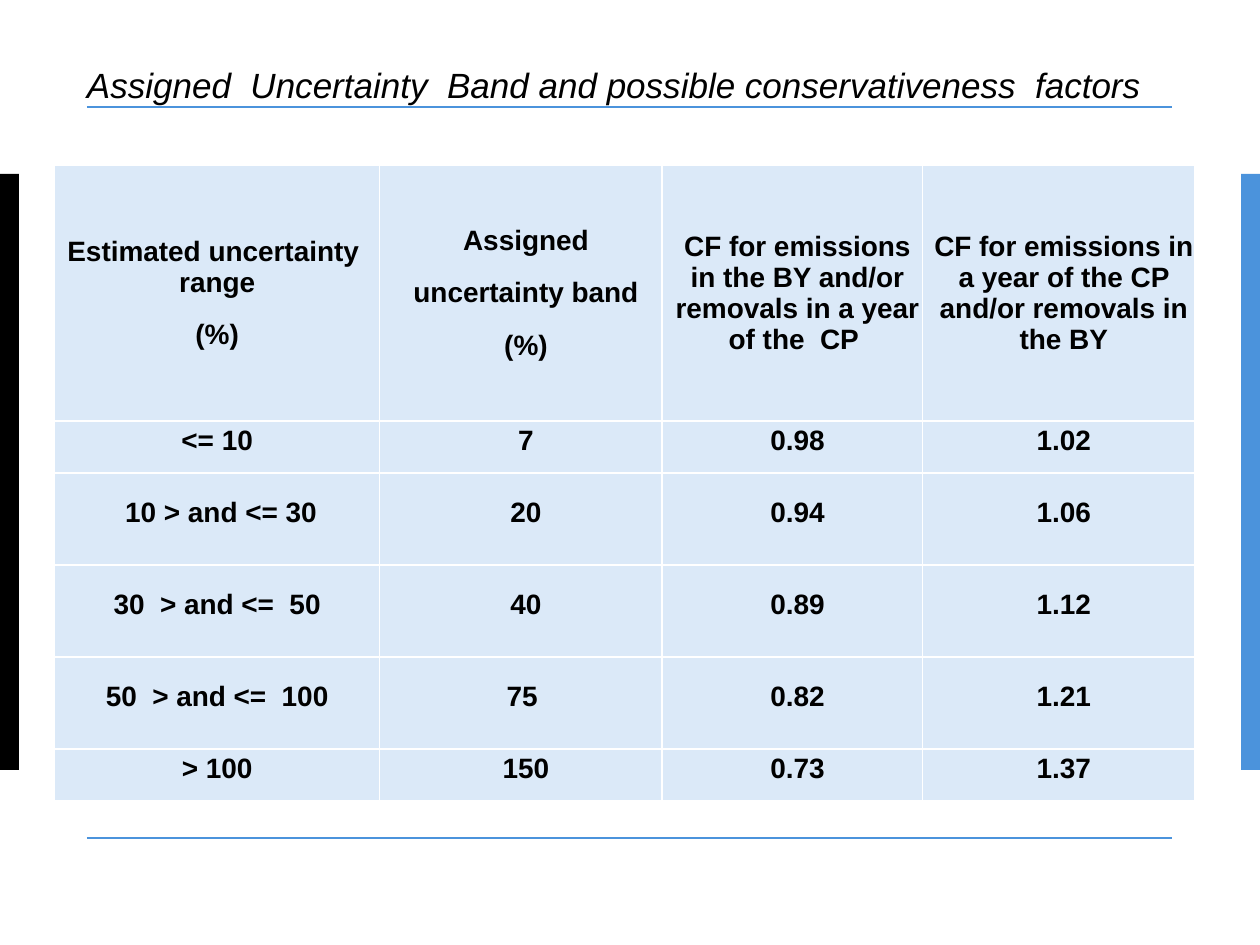
from lxml import etree
from pptx import Presentation
from pptx.dml.color import RGBColor
from pptx.enum.shapes import MSO_CONNECTOR, MSO_SHAPE
from pptx.enum.text import MSO_ANCHOR, PP_ALIGN
from pptx.oxml.ns import qn
from pptx.util import Pt

RECT = MSO_SHAPE.RECTANGLE
LINE = MSO_CONNECTOR.STRAIGHT
MIDDLE = MSO_ANCHOR.MIDDLE
CENTER = PP_ALIGN.CENTER

BLACK = RGBColor(0x00, 0x00, 0x00)
BLUE = RGBColor(0x4B, 0x93, 0xDC)
PALE = RGBColor(0xDB, 0xE9, 0xF8)
WHITE = RGBColor(0xFF, 0xFF, 0xFF)

TITLE = "Assigned  Uncertainty  Band and possible conservativeness  factors"
# Each header cell is a list of paragraphs; "\n" is a line break
HEADER = [
    ["Estimated uncertainty \nrange", "(%)"],
    ["Assigned", "uncertainty band", "(%)"],
    ["CF for emissions in the BY and/or removals in a year of the  CP "],
    ["CF for emissions in a year of the CP and/or removals in the BY"],
]
ROWS = [
    ["<= 10", "7", "0.98", "1.02"],
    [" 10 > and <= 30", "20", "0.94", "1.06"],
    ["30  > and <=  50", "40", "0.89", "1.12"],
    ["50  > and <=  100", "75 ", "0.82", "1.21"],
    ["> 100", "150", "0.73", "1.37"],
]
WIDTHS = [185.8, 161.3, 149, 155.5]
HEIGHTS = [146.2, 29.5, 52.6, 52.6, 52.6, 29.5]


def add_run(para, text, size, bold=False, italic=False):
    run = para.add_run()
    run.text = text
    font = run.font
    font.name, font.size = "Arial", Pt(size)
    font.bold, font.italic = bold, italic
    font.color.rgb = BLACK


def add_bar(slide, left, color):
    bar = slide.shapes.add_shape(RECT, Pt(left), Pt(99.4), Pt(10.8), Pt(340.6))
    bar.shadow.inherit = False
    bar.fill.solid()
    bar.fill.fore_color.rgb = color
    bar.line.fill.background()


def add_rule(slide, top):
    rule = slide.shapes.add_connector(LINE, Pt(49.7), Pt(top), Pt(669.6), Pt(top))
    rule.line.color.rgb = BLUE
    rule.line.width = Pt(1)
    etree.SubElement(rule._element.spPr, qn("a:effectLst"))


def add_title(slide):
    box = slide.shapes.add_textbox(Pt(49.7), Pt(24.5), Pt(620), Pt(36))
    frame = box.text_frame
    frame.word_wrap = True
    frame.vertical_anchor = MIDDLE
    frame.margin_left = frame.margin_right = Pt(0)
    frame.margin_top = frame.margin_bottom = Pt(0)
    para = frame.paragraphs[0]
    para.line_spacing = 1.5
    add_run(para, TITLE, 20, italic=True)


def add_edges(cell):
    props = cell._tc.get_or_add_tcPr()
    for side in ("lnL", "lnR", "lnT", "lnB"):
        edge = etree.SubElement(props, qn("a:" + side), w=str(Pt(1)))
        fill = etree.SubElement(edge, qn("a:solidFill"))
        etree.SubElement(fill, qn("a:srgbClr"), val=str(WHITE))


def fill_cell(cell, texts, gap, indent, pitch=None):
    cell.margin_left = cell.margin_right = Pt(0)
    cell.margin_top = cell.margin_bottom = Pt(0)
    cell.vertical_anchor = MIDDLE
    add_edges(cell)
    cell.fill.solid()
    cell.fill.fore_color.rgb = PALE
    frame = cell.text_frame
    for i, text in enumerate(texts):
        para = frame.add_paragraph() if i else frame.paragraphs[0]
        para.alignment = CENTER
        para.space_before = Pt(gap if i else 0)
        para.space_after = Pt(gap)
        if pitch:
            para.line_spacing = Pt(pitch)
        if indent:
            para._p.get_or_add_pPr().set("marL", str(Pt(indent)))
        for j, part in enumerate(text.split("\n")):
            if j:
                para.add_line_break()
            add_run(para, part, 16, bold=True)


def add_grid(slide):
    frame = slide.shapes.add_table(
        len(HEIGHTS), len(WIDTHS), Pt(31.2), Pt(94.5),
        Pt(sum(WIDTHS)), Pt(sum(HEIGHTS)))
    table = frame.table
    table.first_row = table.horz_banding = False
    for col, width in zip(table.columns, WIDTHS):
        col.width = Pt(width)
    for row, height in zip(table.rows, HEIGHTS):
        row.height = Pt(height)
    for c in range(len(WIDTHS)):
        indent = 5.8 if c else 0
        fill_cell(table.cell(0, c), HEADER[c], 6, indent)
        for r, row in enumerate(ROWS, 1):
            fill_cell(table.cell(r, c), [row[c]], 2, indent, 11)


def main():
    deck = Presentation()
    deck.slide_width, deck.slide_height = Pt(720), Pt(540)
    slide = deck.slides.add_slide(deck.slide_layouts[6])

    # Side bars and rules
    add_bar(slide, 0, BLACK)
    add_bar(slide, 709.2, BLUE)
    for top in (61.2, 478.8):
        add_rule(slide, top)

    # Title and table
    add_title(slide)
    add_grid(slide)
    deck.save("out.pptx")


if __name__ == "__main__":
    main()
